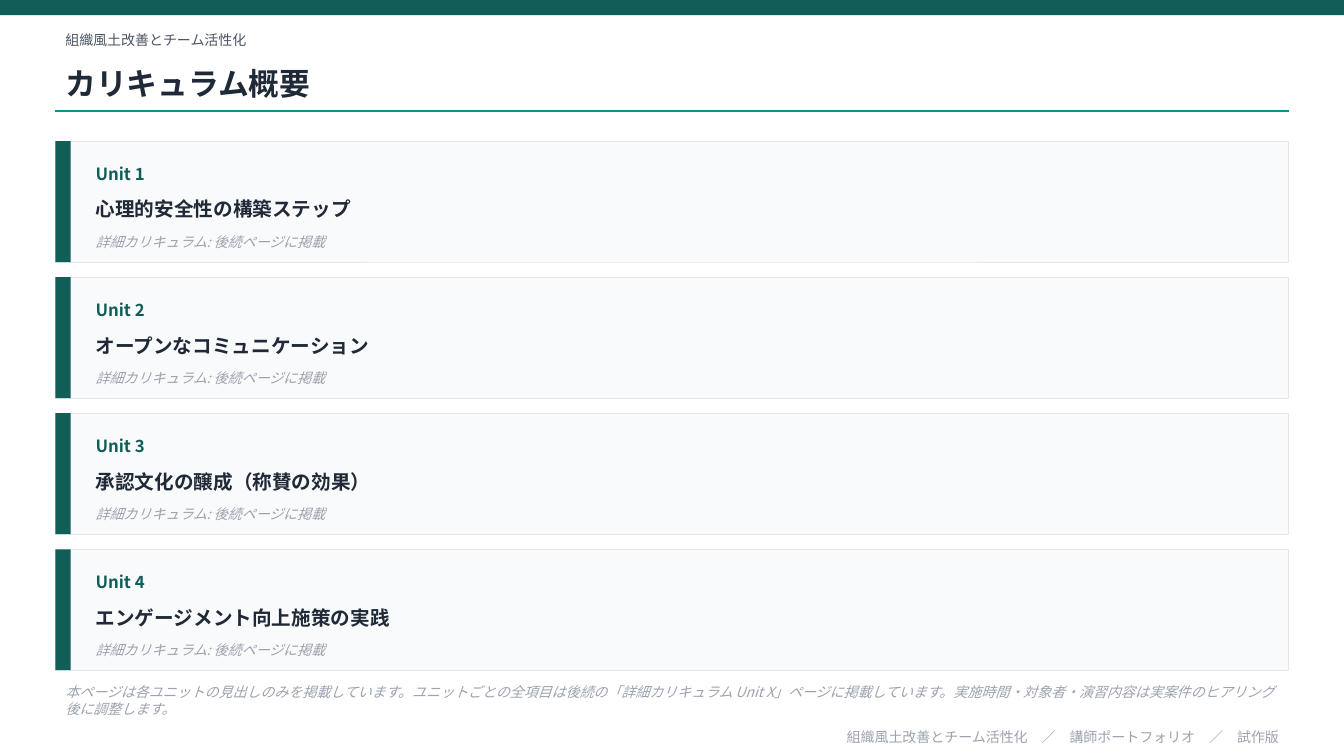
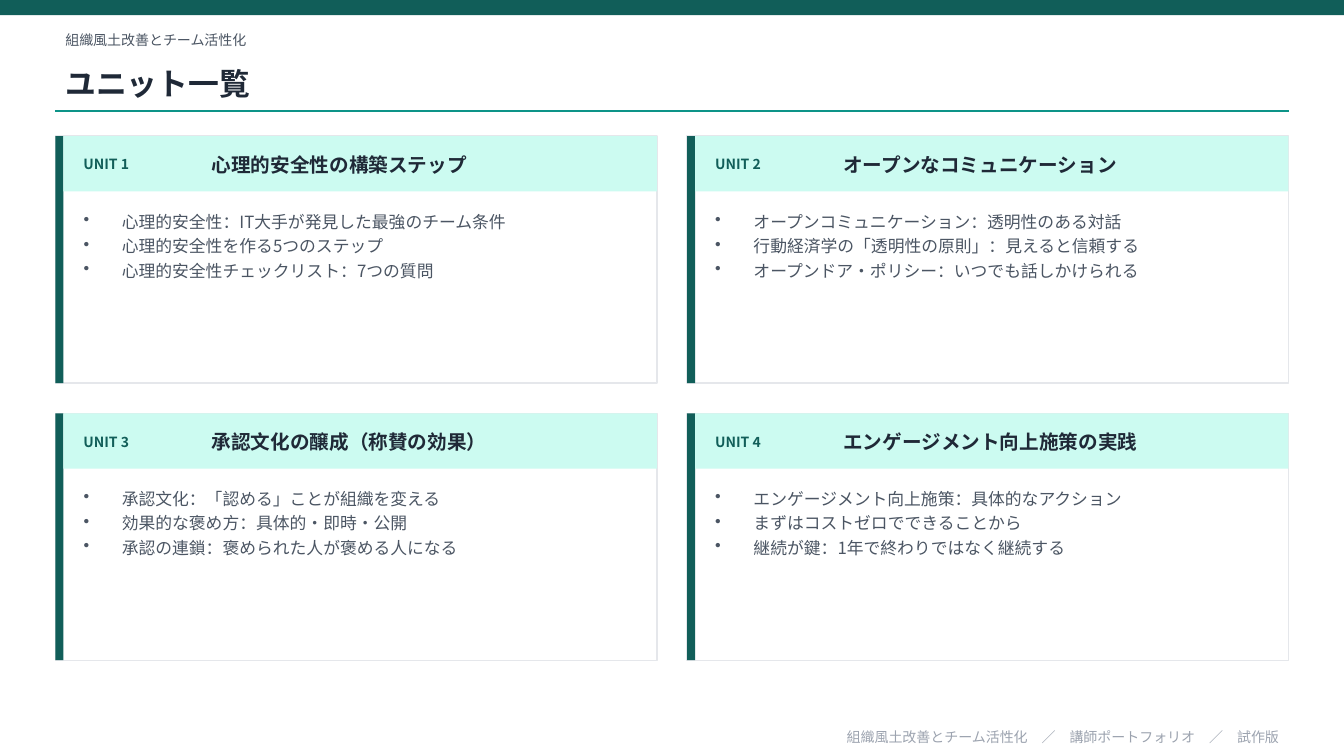
"""Build the curriculum overview and unit list slides."""
from lxml import etree
from pptx import Presentation
from pptx.dml.color import RGBColor
from pptx.enum import shapes, text
from pptx.oxml import ns
from pptx.util import Inches, Pt

FONT = "Noto Sans CJK JP"
WHITE = RGBColor(0xFF, 0xFF, 0xFF)
DARK = RGBColor(0x11, 0x5E, 0x59)
TEAL = RGBColor(0x0D, 0x94, 0x88)
MINT = RGBColor(0xCC, 0xFB, 0xF1)
INK = RGBColor(0x1F, 0x29, 0x37)
GRAY = RGBColor(0x4B, 0x55, 0x63)
MUTED = RGBColor(0x9C, 0xA3, 0xAF)
PALE = RGBColor(0xF9, 0xFA, 0xFB)
EDGE = RGBColor(0xE5, 0xE7, 0xEB)

LEFT, WIDE = 0.55, 12.23
COURSE = "組織風土改善とチーム活性化"
FOOTER = COURSE + "　／　講師ポートフォリオ　／　試作版"
DETAIL = "詳細カリキュラム: 後続ページに掲載"
NOTE = (
    "本ページは各ユニットの見出しのみを掲載しています。"
    "ユニットごとの全項目は後続の「詳細カリキュラム Unit X」ページに掲載しています。"
    "実施時間・対象者・演習内容は実案件のヒアリング後に調整します。"
)
UNITS = [
    ("心理的安全性の構築ステップ", [
        "心理的安全性：IT大手が発見した最強のチーム条件",
        "心理的安全性を作る5つのステップ",
        "心理的安全性チェックリスト：7つの質問",
    ]),
    ("オープンなコミュニケーション", [
        "オープンコミュニケーション：透明性のある対話",
        "行動経済学の「透明性の原則」：見えると信頼する",
        "オープンドア・ポリシー：いつでも話しかけられる",
    ]),
    ("承認文化の醸成（称賛の効果）", [
        "承認文化：「認める」ことが組織を変える",
        "効果的な褒め方：具体的・即時・公開",
        "承認の連鎖：褒められた人が褒める人になる",
    ]),
    ("エンゲージメント向上施策の実践", [
        "エンゲージメント向上施策：具体的なアクション",
        "まずはコストゼロでできることから",
        "継続が鍵：1年で終わりではなく継続する",
    ]),
]


class Deck:
    def __init__(self):
        self.prs = Presentation()
        self.prs.slide_width = Inches(13.33)
        self.prs.slide_height = Inches(7.5)
        self.slide = None

    def page(self, title):
        self.slide = self.prs.slides.add_slide(self.prs.slide_layouts[6])
        self.rect(0, 0, 13.33, 0.15, DARK)
        self.label(LEFT, 0.25, WIDE, 0.3, COURSE, 10, GRAY)
        self.label(LEFT, 0.55, WIDE, 0.55, title, 22, INK, bold=True)
        self.rule(LEFT, 1.1, WIDE)

    def footer(self):
        self.label(LEFT, 7.2, WIDE, 0.22, FOOTER, 10, MUTED,
                   align=text.PP_ALIGN.RIGHT)

    def rect(self, x, y, w, h, fill, edge=None, weight=1):
        box = self.slide.shapes.add_shape(
            shapes.MSO_SHAPE.RECTANGLE,
            Inches(x), Inches(y), Inches(w), Inches(h))
        box.shadow.inherit = False
        box.fill.solid()
        box.fill.fore_color.rgb = fill
        if edge is None:
            box.line.fill.background()
        else:
            box.line.color.rgb = edge
            box.line.width = Pt(weight)

    def rule(self, x, y, w):
        line = self.slide.shapes.add_connector(
            shapes.MSO_CONNECTOR.STRAIGHT,
            Inches(x), Inches(y), Inches(x + w), Inches(y))
        line.line.color.rgb = TEAL
        line.line.width = Pt(1)
        etree.SubElement(line._element.spPr, ns.qn("a:effectLst"))

    def frame(self, x, y, w, h, anchor):
        box = self.slide.shapes.add_textbox(
            Inches(x), Inches(y), Inches(w), Inches(h))
        box.text_frame.word_wrap = True
        box.text_frame.vertical_anchor = anchor
        return box.text_frame

    def style(self, para, size, color, bold=False, italic=False):
        font = para.font
        font.name, font.size = FONT, Pt(size)
        font.bold, font.italic = bold, italic
        font.color.rgb = color
        props = para._p.pPr.find(ns.qn("a:defRPr"))
        etree.SubElement(props, ns.qn("a:ea"), typeface=FONT)

    def label(self, x, y, w, h, words, size, color, bold=False,
              italic=False, align=text.PP_ALIGN.LEFT):
        para = self.frame(x, y, w, h, text.MSO_ANCHOR.MIDDLE).paragraphs[0]
        para.text = words
        para.alignment = align
        self.style(para, size, color, bold, italic)

    def bullets(self, x, y, w, h, items):
        frame = self.frame(x, y, w, h, text.MSO_ANCHOR.TOP)
        for i, item in enumerate(items):
            para = frame.add_paragraph() if i else frame.paragraphs[0]
            para.text = item
            para.space_after = Pt(3)
            props = para._p.get_or_add_pPr()
            props.set("marL", str(Inches(0.38)))
            props.set("indent", str(-Inches(0.38)))
            etree.SubElement(props, ns.qn("a:buChar"), char="•")
            self.style(para, 12, GRAY)

    def row(self, y, num, name):
        self.rect(LEFT, y, WIDE, 1.2, PALE, EDGE, 0.5)
        self.rect(LEFT, y, 0.15, 1.2, DARK)
        x = LEFT + 0.3
        self.label(x, y + 0.12, 1.5, 0.4, f"Unit {num}", 12, DARK, bold=True)
        self.label(x, y + 0.45, 11.73, 0.45, name, 14, INK, bold=True)
        self.label(x, y + 0.85, 11.73, 0.3, DETAIL, 10, MUTED, italic=True)

    def card(self, x, y, w, num, name, items):
        self.rect(x, y, w, 2.45, WHITE, EDGE)
        self.rect(x, y, 0.08, 2.45, DARK)
        self.rect(x + 0.08, y, w - 0.08, 0.55, MINT)
        self.label(x + 0.18, y + 0.08, 1.2, 0.4, f"UNIT {num}", 10, DARK,
                   bold=True)
        self.label(x + 1.45, y + 0.08, w - 1.6, 0.4, name, 14, INK, bold=True)
        self.bullets(x + 0.18, y + 0.7, w - 0.36, 1.6, items)


def main():
    deck = Deck()
    deck.page("カリキュラム概要")
    for i, (name, _) in enumerate(UNITS):
        deck.row(1.4 + i * 1.35, i + 1, name)
    deck.label(LEFT, 6.75, WIDE, 0.4, NOTE, 10, MUTED, italic=True)
    deck.footer()

    deck.page("ユニット一覧")
    gap = 0.3
    width = (WIDE - gap) / 2
    for i, (name, items) in enumerate(UNITS):
        down, over = divmod(i, 2)
        deck.card(LEFT + over * (width + gap), 1.35 + down * (2.45 + gap),
                  width, i + 1, name, items)
    deck.footer()
    deck.prs.save("out.pptx")


if __name__ == "__main__":
    main()
